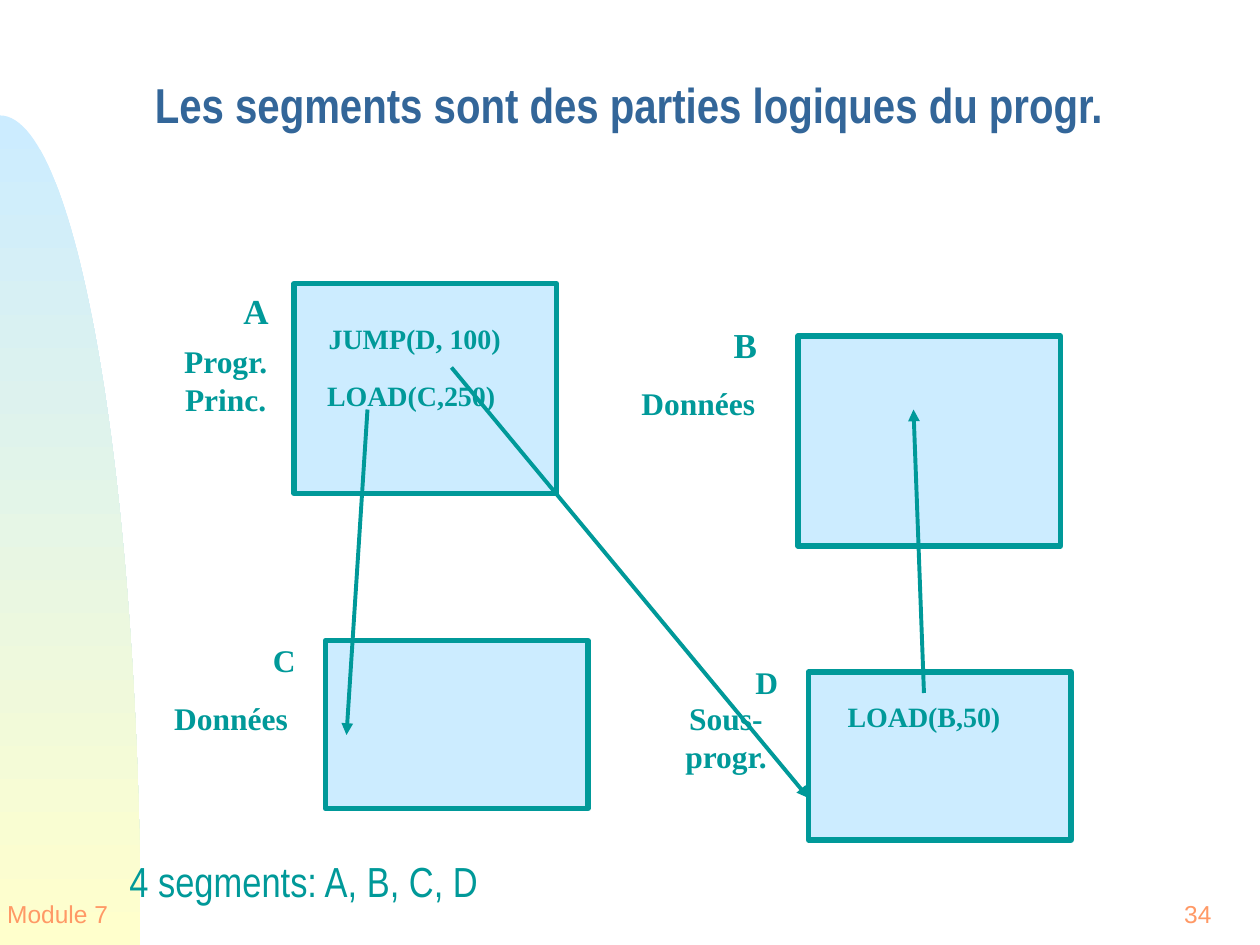
from lxml import etree
from pptx import Presentation
from pptx.dml.color import RGBColor
from pptx.enum.shapes import MSO_CONNECTOR, MSO_SHAPE
from pptx.enum.text import MSO_ANCHOR, MSO_AUTO_SIZE, PP_ALIGN
from pptx.oxml.ns import qn
from pptx.util import Inches, Pt

LEFT, CENTER, RIGHT = PP_ALIGN.LEFT, PP_ALIGN.CENTER, PP_ALIGN.RIGHT
TOP, MIDDLE = MSO_ANCHOR.TOP, MSO_ANCHOR.MIDDLE
GROW, FIXED = MSO_AUTO_SIZE.SHAPE_TO_FIT_TEXT, MSO_AUTO_SIZE.NONE
RECTANGLE, STRAIGHT = MSO_SHAPE.RECTANGLE, MSO_CONNECTOR.STRAIGHT

COLORS = {"teal": "009999", "sky": "CCECFF", "cream": "FFFFCC",
          "title": "336699", "footer": "FF9966"}
SERIF, SANS, NARROW = "Times New Roman", "Arial", "Arial Narrow"


def color(name):
    return RGBColor.from_string(COLORS[name])


def grid(*units):
    """Lengths on a grid of 120 columns by 90 rows, twelve to the inch."""
    return [Inches(unit / 12) for unit in units]


class SegmentSlide:
    def __init__(self, deck):
        self.shapes = deck.slides.add_slide(deck.slide_layouts[6]).shapes

    def curved_band(self, controls, steps=60):
        """Fill the area under a cubic curve down to the slide's bottom."""
        points = []
        for step in range(steps + 1):
            t = step / steps
            weights = ((1 - t) ** 3, 3 * t * (1 - t) ** 2, 3 * t * t * (1 - t), t ** 3)
            points.append(grid(*(sum(w * c for w, c in zip(weights, axis))
                                 for axis in zip(*controls))))
        points.append(grid(0, 90))
        builder = self.shapes.build_freeform(*points[0])
        builder.add_line_segments(points[1:], close=True)
        band = builder.convert_to_shape()
        band.shadow.inherit = False
        band.line.fill.background()
        band.fill.gradient()
        band.fill.gradient_angle = 270
        for stop, name, position in zip(band.fill.gradient_stops, ("sky", "cream"), (0, 1)):
            stop.color.rgb = color(name)
            stop.position = position

    def segment(self, *place):
        box = self.shapes.add_shape(RECTANGLE, *grid(*place))
        box.shadow.inherit = False
        box.fill.solid()
        box.fill.fore_color.rgb = color("sky")
        box.line.color.rgb = color("teal")
        box.line.width = Pt(3)

    def text(self, lines, place, size, font=SERIF, ink="teal", bold=True,
             align=CENTER, anchor=TOP, fit=GROW, wrap=True, spacing=None):
        frame = self.shapes.add_textbox(*grid(*place)).text_frame
        frame.word_wrap = wrap
        frame.auto_size = fit
        frame.vertical_anchor = anchor
        for index, line in enumerate(lines):
            para = frame.add_paragraph() if index else frame.paragraphs[0]
            para.alignment = align
            para.line_spacing = spacing
            span = para.add_run()
            span.text = line
            span.font.name = font
            span.font.size = Pt(size)
            span.font.bold = bold
            span.font.color.rgb = color(ink)

    def arrow(self, start, end):
        line = self.shapes.add_connector(STRAIGHT, *grid(*start, *end))
        line.line.color.rgb = color("teal")
        line.line.width = Pt(2.25)
        outline = line.line._get_or_add_ln()
        etree.SubElement(outline, qn("a:tailEnd"), type="triangle")
        etree.SubElement(line._element.spPr, qn("a:effectLst"))


def main():
    deck = Presentation()
    deck.slide_width, deck.slide_height = grid(120, 90)
    page = SegmentSlide(deck)

    # Background band, footer and title
    page.curved_band([(0, 11), (7.4, 11), (13.4, 46.4), (13.4, 90)])
    footer = {"size": 14, "font": SANS, "ink": "footer", "bold": False,
              "anchor": MIDDLE, "fit": FIXED, "wrap": False}
    page.text(["Module 7"], (0, 84, 11, 6), **footer)
    page.text(["34"], (111.6, 84, 8.4, 6), align=LEFT, **footer)
    page.text(["Les segments sont des parties logiques du progr."],
              (13.56, 4.32, 103.44, 12.6), 28, NARROW, "title",
              align=LEFT, anchor=MIDDLE, fit=FIXED, spacing=0.7)

    # Segments A, C, D and B
    for left, top, height in ((28, 27, 20), (31, 61, 16), (77, 64, 16), (76, 32, 20)):
        page.segment(left, top, 25, height)

    # Segment letters
    for letter, left, top, size in (("A", 22, 27, 20), ("B", 68.64, 30.24, 20),
                                    ("C", 24.72, 60.48, 18), ("D", 70.68, 62.52, 18)):
        page.text([letter], (left, top, 4.7, 5), size, wrap=False)

    # Segment roles
    page.text(["Progr.", "Princ."], (16, 32, 11, 8.4), 18)
    page.text(["Données"], (59, 36, 15, 4.8), 18)
    page.text(["Données"], (15, 66, 14, 4.8), 18)
    page.text(["Sous-", "progr."], (63.84, 66, 10.6, 8.4), 18, wrap=False)

    # Instructions, and arrows to the segments they refer to
    for code, left, top, width, start, end in (
            ("JUMP(D, 100)", 29, 30, 21, (43, 35), (77, 76)),
            ("LOAD(C,250)", 29.16, 35.5, 20, (35, 39), (33, 70)),
            ("LOAD(B,50)", 78, 66, 20, (88, 66), (87, 39))):
        page.text([code], (left, top, width, 4.4), 16)
        page.arrow(start, end)

    # Caption
    page.text(["4 segments: A, B, C, D"], (3.24, 80.88, 43.44, 6), 24, NARROW,
              bold=False, align=RIGHT)

    deck.save("out.pptx")


if __name__ == "__main__":
    main()
